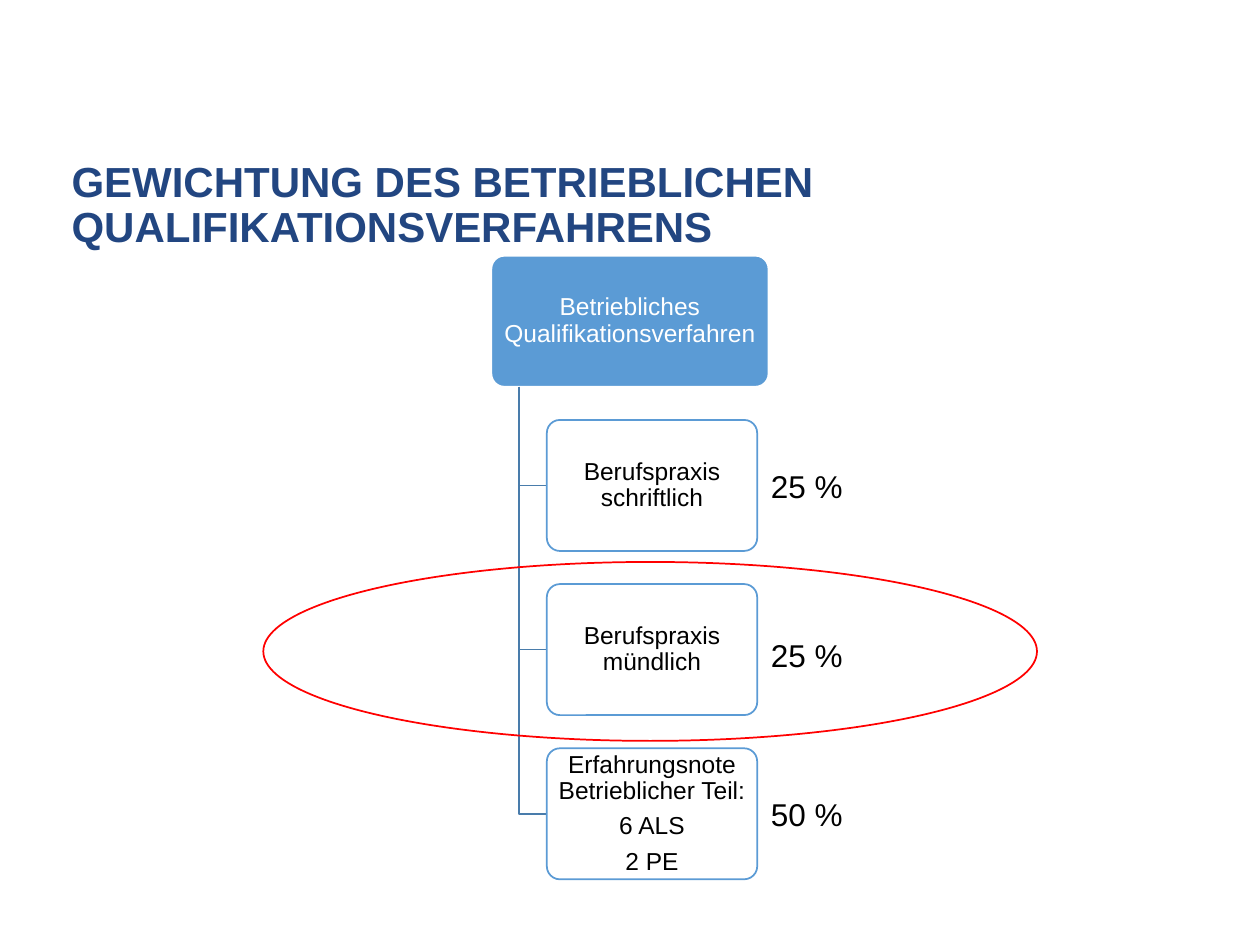
from dataclasses import dataclass

from lxml.etree import SubElement
from pptx import Presentation
from pptx.dml.color import RGBColor
from pptx.enum.shapes import MSO_SHAPE
from pptx.enum.text import MSO_ANCHOR, PP_ALIGN
from pptx.oxml.ns import qn
from pptx.util import Inches, Pt

COLORS = {
    "title": "224681",
    "blue": "5B9BD5",
    "branch": "497CAB",
    "white": "FFFFFF",
    "black": "000000",
    "red": "FF0000",
}
BOX_HEIGHT = 1.04
ROOT_LEFT, ROOT_TOP, ROOT_WIDTH = 3.9, 2.03, 2.2
PART_LEFT, PART_WIDTH = 4.34, 1.67
PITCH = 1.303
TRUNK_X = 4.12
SHARE_LEFT = 6.02


@dataclass
class Part:
    lines: list[str]
    share: str
    share_top: float


PARTS = [
    Part(["Berufspraxis schriftlich"], "25 %", 3.66),
    Part(["Berufspraxis mündlich"], "25 %", 5.0),
    Part(["Erfahrungsnote Betrieblicher Teil:", "6 ALS", "2 PE"], "50 %", 6.26),
]


def rgb(name: str) -> RGBColor:
    return RGBColor.from_string(COLORS[name])


def set_font(p, size: float, color: str, bold: bool = False) -> None:
    p.font.name = "Arial"
    p.font.size = Pt(size)
    p.font.bold = bold
    p.font.color.rgb = rgb(color)


def set_line(sp, color: str) -> None:
    sp.shadow.inherit = False
    sp.line.color.rgb = rgb(color)
    sp.line.width = Pt(1)


def add_text(s, left: float, top: float, width: float, height: float,
             text: str, size: float, color: str, wrap: bool = False):
    tf = s.shapes.add_textbox(
        Inches(left), Inches(top), Inches(width), Inches(height)).text_frame
    tf.word_wrap = wrap
    p = tf.paragraphs[0]
    p.text = text
    set_font(p, size, color)
    return p


def add_box(s, left: float, top: float, width: float, lines: list[str],
            fill: str, line: str, color: str):
    sp = s.shapes.add_shape(
        MSO_SHAPE.ROUNDED_RECTANGLE,
        Inches(left), Inches(top), Inches(width), Inches(BOX_HEIGHT))
    sp.adjustments[0] = 0.1
    sp.fill.solid()
    sp.fill.fore_color.rgb = rgb(fill)
    set_line(sp, line)
    tf = sp.text_frame
    tf.word_wrap = True
    tf.vertical_anchor = MSO_ANCHOR.MIDDLE
    tf.margin_left = tf.margin_right = Inches(0.06)
    tf.margin_top = tf.margin_bottom = Inches(0.05)
    for i, text in enumerate(lines):
        p = tf.add_paragraph() if i else tf.paragraphs[0]
        p.text = text
        p.alignment = PP_ALIGN.CENTER
        p.line_spacing = 0.9
        p.space_after = Pt(4.9)
        set_font(p, 14, color)
    return sp


def set_opacity(sp, percent: int) -> None:
    color = sp.fill._xPr.find(qn("a:solidFill"))[0]
    SubElement(color, qn("a:alpha"), val=str(percent * 1000))


def add_branch(s, bottom: float) -> None:
    """Draw the elbow from the root box down to the middle of a part box."""
    builder = s.shapes.build_freeform(
        Inches(TRUNK_X), Inches(ROOT_TOP + BOX_HEIGHT))
    builder.add_line_segments(
        [(Inches(TRUNK_X), Inches(bottom)), (Inches(PART_LEFT), Inches(bottom))],
        close=False)
    sp = builder.convert_to_shape()
    sp.fill.background()
    set_line(sp, "branch")


def main() -> None:
    prs = Presentation()
    prs.slide_width, prs.slide_height = Inches(10), Inches(7.5)
    s = prs.slides.add_slide(prs.slide_layouts[6])

    title = add_text(s, 0.47, 1.23, 7.64, 0.94,
                     "GEWICHTUNG DES BETRIEBLICHEN QUALIFIKATIONSVERFAHRENS",
                     24, "title", wrap=True)
    title.line_spacing = 0.9
    title.font.bold = True

    add_box(s, ROOT_LEFT, ROOT_TOP, ROOT_WIDTH,
            ["Betriebliches Qualifikationsverfahren"], "blue", "white", "white")
    for i, part in enumerate(PARTS, start=1):
        top = ROOT_TOP + i * PITCH
        add_branch(s, top + BOX_HEIGHT / 2)
        sp = add_box(s, PART_LEFT, top, PART_WIDTH, part.lines,
                     "white", "blue", "black")
        set_opacity(sp, 90)
        add_text(s, SHARE_LEFT, part.share_top, 0.78, 0.4, part.share, 18, "black")

    highlight = s.shapes.add_shape(
        MSO_SHAPE.OVAL, Inches(2.09), Inches(4.46), Inches(6.14), Inches(1.42))
    highlight.fill.background()
    set_line(highlight, "red")

    prs.save("out.pptx")


if __name__ == "__main__":
    main()
